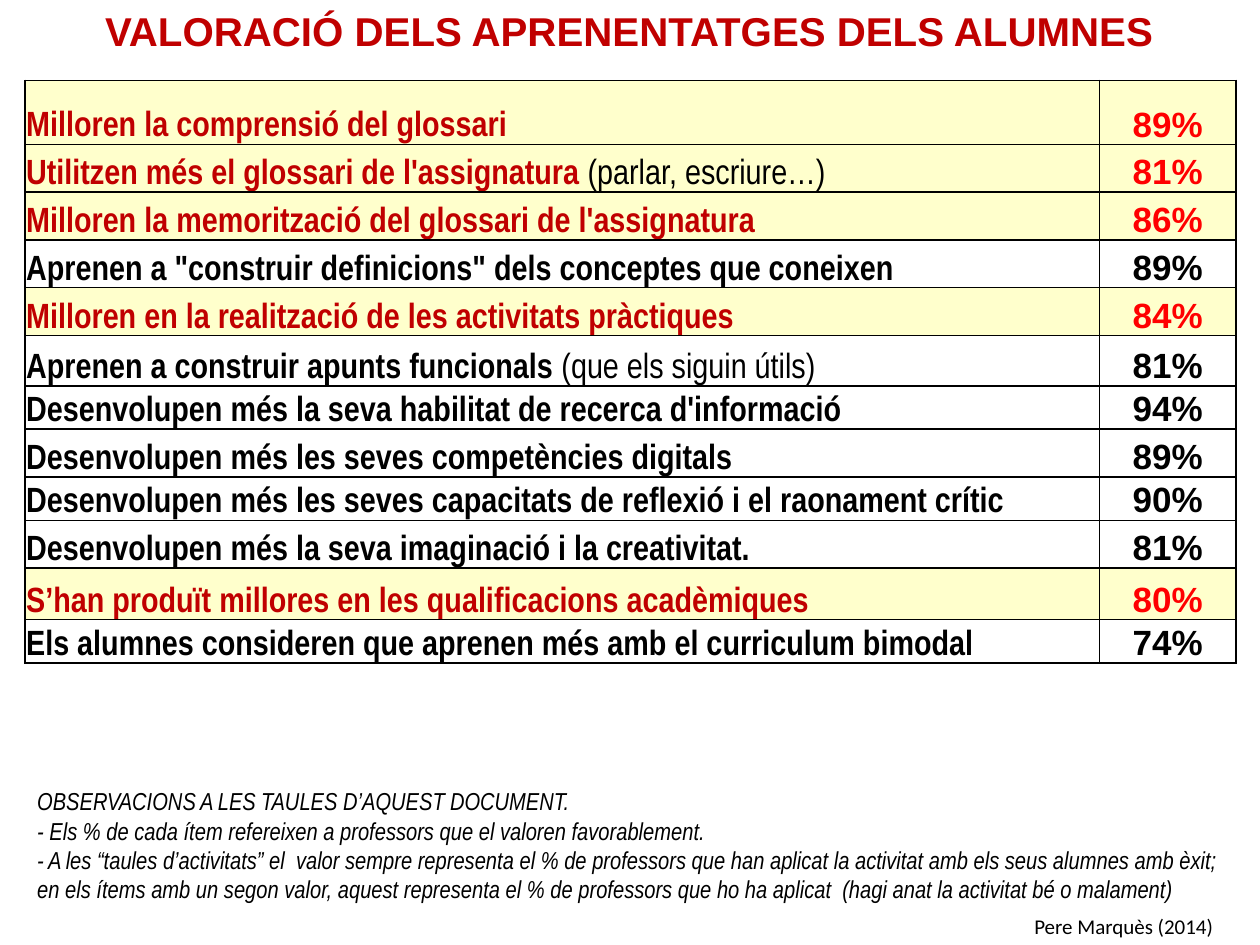
from lxml.etree import SubElement
from pptx import Presentation
from pptx.dml.color import RGBColor
from pptx.enum.text import MSO_ANCHOR as ANCHOR, PP_ALIGN as ALIGN
from pptx.oxml.ns import qn
from pptx.util import Pt

BLACK = RGBColor(0, 0, 0)
WHITE = RGBColor(0xFF, 0xFF, 0xFF)
CREAM = RGBColor(0xFF, 0xFF, 0xCC)
DARK_RED = RGBColor(0xC0, 0, 0)
RED = RGBColor(0xFF, 0, 0)

RATINGS = [
    ("Milloren la comprensió del glossari", "", "89%", 36.6, True),
    ("Utilitzen més el glossari de l'assignatura ", "(parlar, escriure…)", "81%", 27.3, True),
    ("Milloren la memorització del glossari de l'assignatura", "", "86%", 27.3, True),
    ('Aprenen a "construir definicions" dels conceptes que coneixen', "", "89%", 27.3, False),
    ("Milloren en la realització de les activitats pràctiques", "", "84%", 27.3, True),
    ("Aprenen a construir apunts funcionals ", "(que els siguin útils)", "81%", 28.8, False),
    ("Desenvolupen més la seva habilitat de recerca d'informació", "", "94%", 24.5, False),
    ("Desenvolupen més les seves competències digitals", "", "89%", 27.3, False),
    ("Desenvolupen més les seves capacitats de reflexió i el raonament crític", "", "90%", 24.5, False),
    ("Desenvolupen més la seva imaginació i la creativitat.", "", "81%", 27.3, False),
    ("S’han produït millores en les qualificacions acadèmiques", "", "80%", 29.5, True),
    ("Els alumnes consideren que aprenen més amb el curriculum bimodal", "", "74%", 24.5, False),
]
NOTES = [
    "OBSERVACIONS A LES TAULES D’AQUEST DOCUMENT.",
    "- Els % de cada ítem refereixen a professors que el valoren favorablement.",
    "- A les “taules d’activitats” el  valor sempre representa el % de professors que han "
    "aplicat la activitat amb els seus alumnes amb èxit; en els ítems amb un segon valor, "
    "aquest representa el % de professors que ho ha aplicat  (hagi anat la activitat bé o malament)",
]


def style_run(r, font, size, color=BLACK, bold=False, italic=False):
    """Set the character format of one run."""
    f = r.font
    f.name, f.size, f.bold, f.italic = font, Pt(size), bold, italic
    f.color.rgb = color


def add_text(s, box, lines, font, size, align=ALIGN.LEFT, **style):
    """Add a wrapping text box with one paragraph per line."""
    tf = s.shapes.add_textbox(*map(Pt, box)).text_frame
    tf.word_wrap = True
    tf.text = "\n".join(lines)
    for p in tf.paragraphs:
        p.alignment = align
        style_run(p.runs[0], font, size, **style)


def add_borders(cell):
    """Draw thin black lines on all four sides of a cell."""
    pr = cell._tc.get_or_add_tcPr()
    for i, side in enumerate(("lnL", "lnR", "lnT", "lnB")):
        ln = pr.makeelement(qn(f"a:{side}"), {"w": str(Pt(1))})
        fill = SubElement(ln, qn("a:solidFill"))
        SubElement(fill, qn("a:srgbClr"), val=str(BLACK))
        pr.insert(i, ln)


def fill_cell(cell, parts, font, color, fill, align):
    """Write a bold part and an optional plain part into a cell."""
    cell.fill.solid()
    cell.fill.fore_color.rgb = fill
    cell.vertical_anchor = ANCHOR.BOTTOM
    cell.margin_left = cell.margin_right = cell.margin_top = Pt(0.75)
    cell.margin_bottom = Pt(0)
    add_borders(cell)
    p = cell.text_frame.paragraphs[0]
    p.alignment = align
    for i, text in enumerate(filter(None, parts)):
        r = p.add_run()
        r.text = text
        style_run(r, font, 20, BLACK if i else color, bold=not i)


def add_ratings(s):
    """Add the table of statements and percentages."""
    height = sum(row[3] for row in RATINGS)
    sp = s.shapes.add_table(len(RATINGS), 2, Pt(14.2), Pt(45.9), Pt(692), Pt(height))
    table = sp.table
    table.first_row = table.horz_banding = False
    table.columns[0].width, table.columns[1].width = Pt(614.2), Pt(77.8)
    for i, (claim, remark, share, row_height, key) in enumerate(RATINGS):
        table.rows[i].height = Pt(row_height)
        fill = CREAM if key else WHITE
        fill_cell(table.cell(i, 0), (claim, remark), "Arial Narrow",
                  DARK_RED if key else BLACK, fill, ALIGN.LEFT)
        fill_cell(table.cell(i, 1), (share,), "Arial",
                  RED if key else BLACK, fill, ALIGN.CENTER)


def main():
    """Build the slide and save it."""
    prs = Presentation()
    prs.slide_width, prs.slide_height = Pt(720), Pt(540)
    s = prs.slides.add_slide(prs.slide_layouts[6])
    add_text(s, (584, 518.4, 136, 21.6), ["Pere Marquès (2014)"], "Calibri", 12)
    add_text(s, (0, 0, 720, 59), ["VALORACIÓ DELS APRENENTATGES DELS ALUMNES"],
             "Arial", 23, ALIGN.CENTER, color=DARK_RED, bold=True)
    add_ratings(s)
    add_text(s, (14.2, 445.7, 692, 75), NOTES, "Arial Narrow", 14, italic=True)
    prs.save("out.pptx")


if __name__ == "__main__":
    main()
